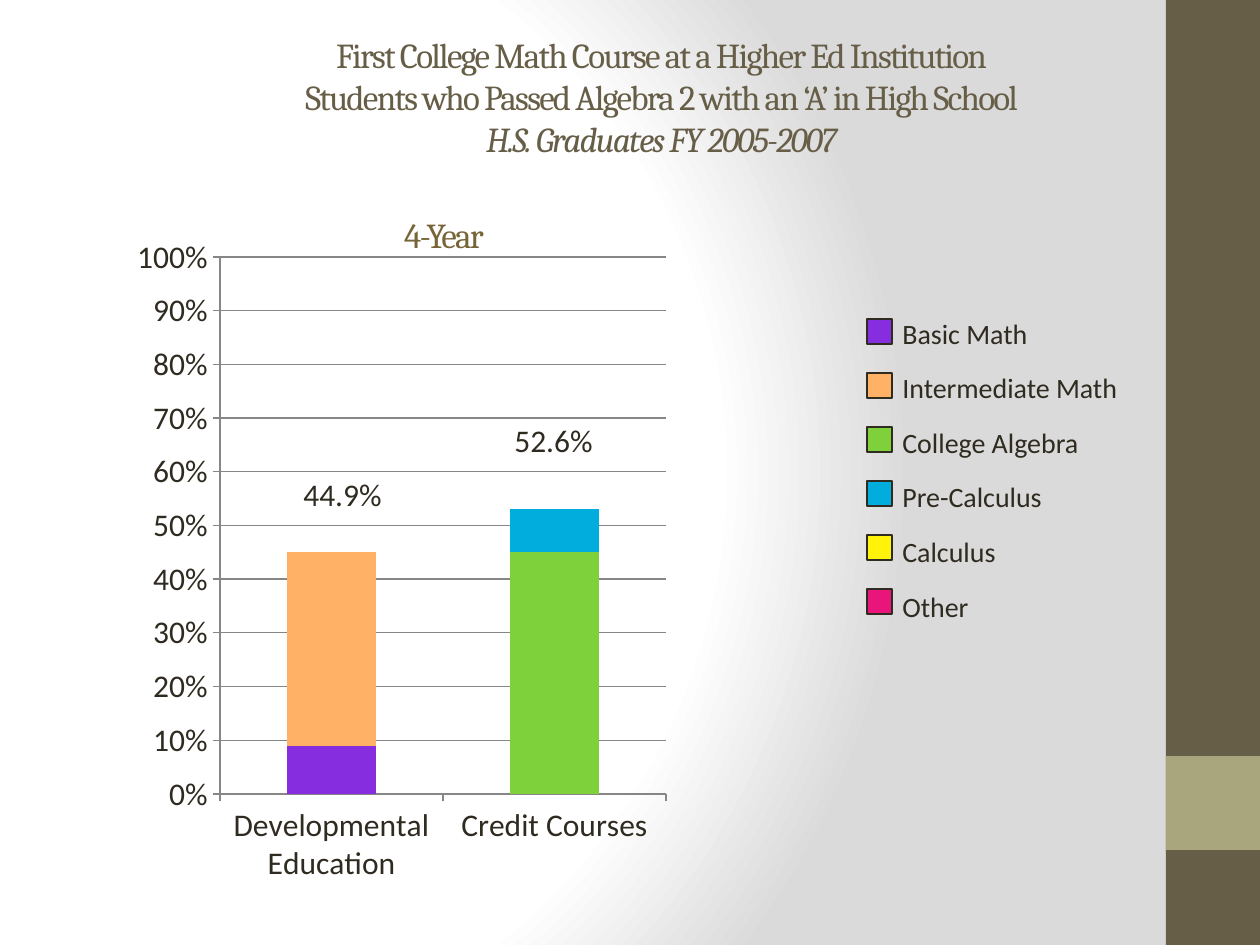
"""Build a slide with a stacked column chart of first college math courses."""
from lxml import etree
from pptx import Presentation
from pptx.chart.data import CategoryChartData
from pptx.dml.color import RGBColor
from pptx.enum.chart import XL_CHART_TYPE, XL_TICK_MARK
from pptx.enum.shapes import MSO_SHAPE
from pptx.enum.text import MSO_ANCHOR, PP_ALIGN
from pptx.oxml import parse_xml
from pptx.oxml.ns import nsdecls
from pptx.util import Pt

STACKED = XL_CHART_TYPE.COLUMN_STACKED
OUTSIDE, NO_TICK = XL_TICK_MARK.OUTSIDE, XL_TICK_MARK.NONE
RECTANGLE = MSO_SHAPE.RECTANGLE
TOP, MIDDLE = MSO_ANCHOR.TOP, MSO_ANCHOR.MIDDLE
LEFT, CENTER = PP_ALIGN.LEFT, PP_ALIGN.CENTER
SCALE = 914400 / 126

INK, BROWN, SAND, GOLD, GRID = "2F2B20", "675E47", "A9A57C", "776537", "868686"
TITLE = [
    "First College Math Course at a Higher Ed Institution",
    "Students who Passed Algebra 2 with an ‘A’ in High School",
    "H.S. Graduates FY 2005-2007",
]
COURSES = [
    ("Basic Math", "862DDF"),
    ("Intermediate Math", "FFB265"),
    ("College Algebra", "7FD13B"),
    ("Pre-Calculus", "00ADDC"),
    ("Calculus", "FFF309"),
    ("Other", "EA157A"),
]
CATEGORIES = ["Developmental Education", "Credit Courses"]
SERIES = [
    ("Series 1", (0.09, 0.45), "7FD13B", {0: "862DDF"}),
    ("Series 2", (0.36, 0.08), "00ADDC", {0: "FFB265"}),
    ("Series 3", (0, 0), "FEB80A", {1: "FFF309"}),
    ("Series 4", (0, 0), "95A39D", {1: "EA157A"}),
]
TOTALS = [("44.9%", 291, 469), ("52.6%", 502, 415)]
SIDEBAR = [((1166, 0, 94, 945), BROWN), ((1166, 756, 94, 94), SAND)]
CHART_BOX = (127, 224, 549, 672)
PLOT_BOX = (220, 257, 446, 537)


def emu(*lengths):
    return [round(length * SCALE) for length in lengths]


def paint(fill, color):
    fill.solid()
    fill.fore_color.rgb = RGBColor.from_string(color)


def add_rectangle(page, place, color, outline=None):
    box = page.shapes.add_shape(RECTANGLE, *emu(*place))
    box.shadow.inherit = False
    paint(box.fill, color)
    if outline:
        paint(box.line.fill, outline)
        box.line.width = Pt(1)
    else:
        box.line.fill.background()


def add_text(page, place, lines, size=18, font="Calibri", color=INK, align=LEFT,
             anchor=TOP, before=0, spacing=0, italic_line=None, joined=False):
    frame = page.shapes.add_textbox(*emu(*place)).text_frame
    frame.word_wrap = True
    frame.vertical_anchor = anchor
    para = frame.paragraphs[0]
    for index, line in enumerate(lines):
        if index and joined:
            para.add_line_break()
        elif index:
            para = frame.add_paragraph()
        para.alignment = align
        para.space_before = Pt(before)
        span = para.add_run()
        span.text = line
        span.font.size = Pt(size)
        span.font.name = font
        span.font.color.rgb = RGBColor.from_string(color)
        if index == italic_line:
            span.font.italic = True
        if spacing:
            span.font._element.set("spc", str(spacing * 100))


def set_background(page):
    fill = page.background.fill
    fill.gradient()
    gradient = page._element.xpath("./p:cSld/p:bg/p:bgPr/a:gradFill")[0]
    stops = "".join(
        f'<a:gs pos="{position * 1000}"><a:srgbClr val="{color}"/></a:gs>'
        for position, color in [(0, "FFFFFF"), (75, "FFFFFF"), (100, "DADADA")])
    gradient.getparent().replace(gradient, parse_xml(
        f'<a:gradFill {nsdecls("a")} rotWithShape="1"><a:gsLst>{stops}</a:gsLst>'
        '<a:path path="circle"><a:fillToRect l="20000" t="50000" r="100000" '
        'b="50000"/></a:path></a:gradFill>'))


def place_plot(chart):
    area = chart._chartSpace.xpath("./c:chart/c:plotArea")[0]
    for old in area.xpath("./c:layout"):
        area.remove(old)
    layout = parse_xml(f'<c:layout {nsdecls("c")}><c:manualLayout/></c:layout>')
    left, top, width, height = CHART_BOX
    x, y, w, h = PLOT_BOX
    values = [("layoutTarget", "inner"), ("xMode", "edge"), ("yMode", "edge"),
              ("x", (x - left) / width), ("y", (y - top) / height),
              ("w", w / width), ("h", h / height)]
    namespace = layout.nsmap["c"]
    for name, value in values:
        etree.SubElement(layout[0], f"{{{namespace}}}{name}").set("val", str(value))
    area.insert(0, layout)


def add_columns(page):
    data = CategoryChartData(number_format="0%")
    data.categories = CATEGORIES
    for name, values, _, _ in SERIES:
        data.add_series(name, values)
    chart = page.shapes.add_chart(STACKED, *emu(*CHART_BOX), data).chart
    chart.has_legend = chart.has_title = False
    chart.font.size = Pt(18)
    chart.font.name = "Calibri"
    chart.font.color.rgb = RGBColor.from_string(INK)
    plot = chart.plots[0]
    plot.vary_by_categories = False
    plot.gap_width, plot.overlap = 150, 100
    for series, (_, _, color, points) in zip(plot.series, SERIES):
        paint(series.format.fill, color)
        for index, point_color in points.items():
            paint(series.points[index].format.fill, point_color)
    scale = chart.value_axis
    scale.minimum_scale, scale.maximum_scale, scale.major_unit = 0, 1, 0.1
    scale.has_major_gridlines = True
    scale.tick_labels.number_format = "0%"
    scale.tick_labels.number_format_is_linked = False
    for axis in (scale, chart.category_axis):
        axis.major_tick_mark, axis.minor_tick_mark = OUTSIDE, NO_TICK
        paint(axis.format.line.fill, GRID)
    paint(scale.major_gridlines.format.line.fill, GRID)
    place_plot(chart)


def main():
    deck = Presentation()
    deck.slide_width, deck.slide_height = emu(1260, 945)
    page = deck.slides.add_slide(deck.slide_layouts[6])
    set_background(page)
    for place, color in SIDEBAR:
        add_rectangle(page, place, color)
    heading = {"size": 20, "font": "Cambria", "align": CENTER, "spacing": -1}
    add_text(page, (126, 34, 1071, 126), TITLE, color=BROWN, anchor=MIDDLE,
             italic_line=2, joined=True, **heading)
    add_columns(page)
    add_text(page, (321, 207, 246, 45), ["4-Year"], color=GOLD, **heading)
    for row, (_, color) in enumerate(COURSES):
        add_rectangle(page, (867, 319 + 54 * row, 25, 25), color, INK)
    add_text(page, (890, 310, 306, 323), [name for name, _ in COURSES],
             size=16, before=12)
    for label, left, top in TOTALS:
        add_text(page, (left, top, 112, 50), [label])
    deck.save("out.pptx")


if __name__ == "__main__":
    main()
